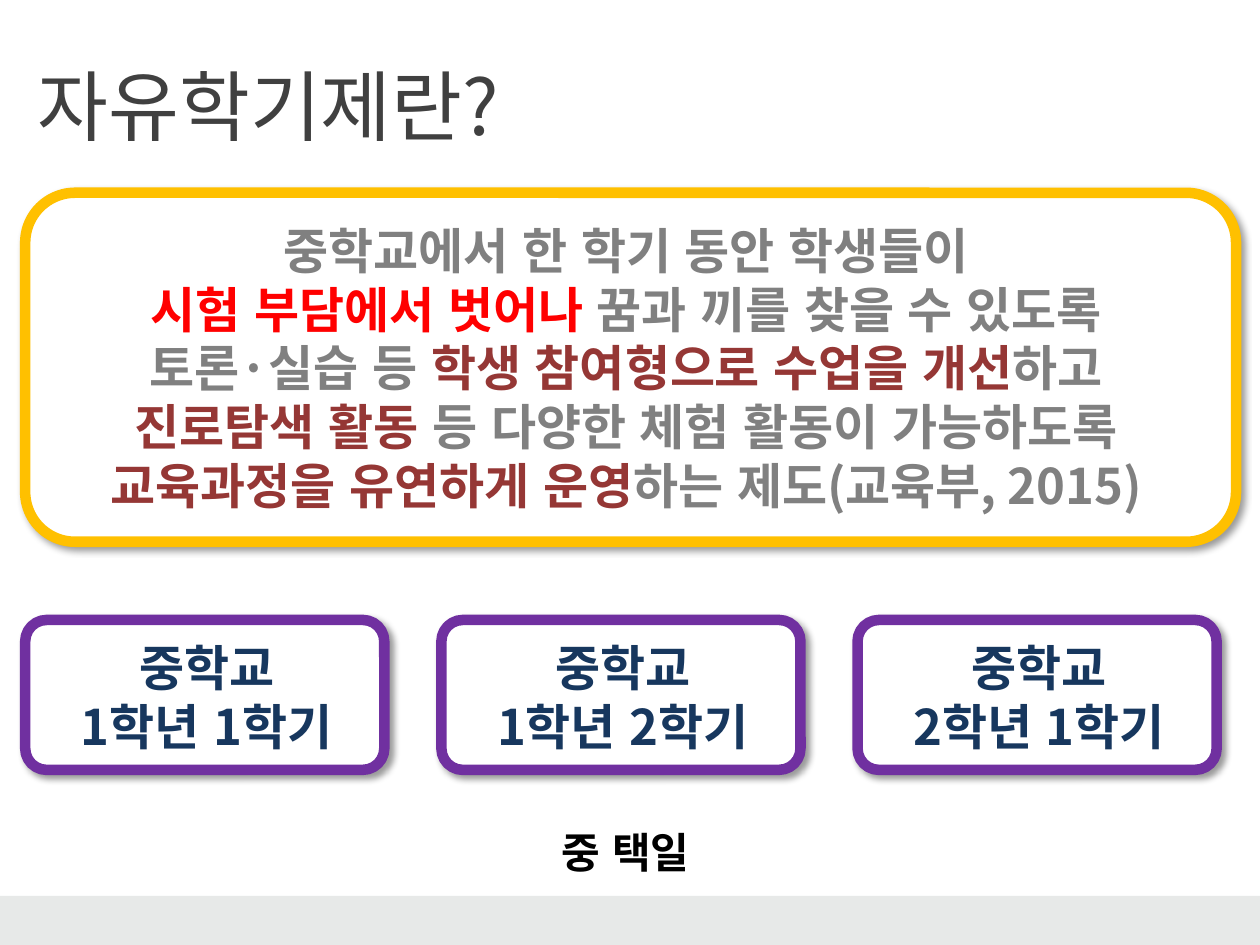
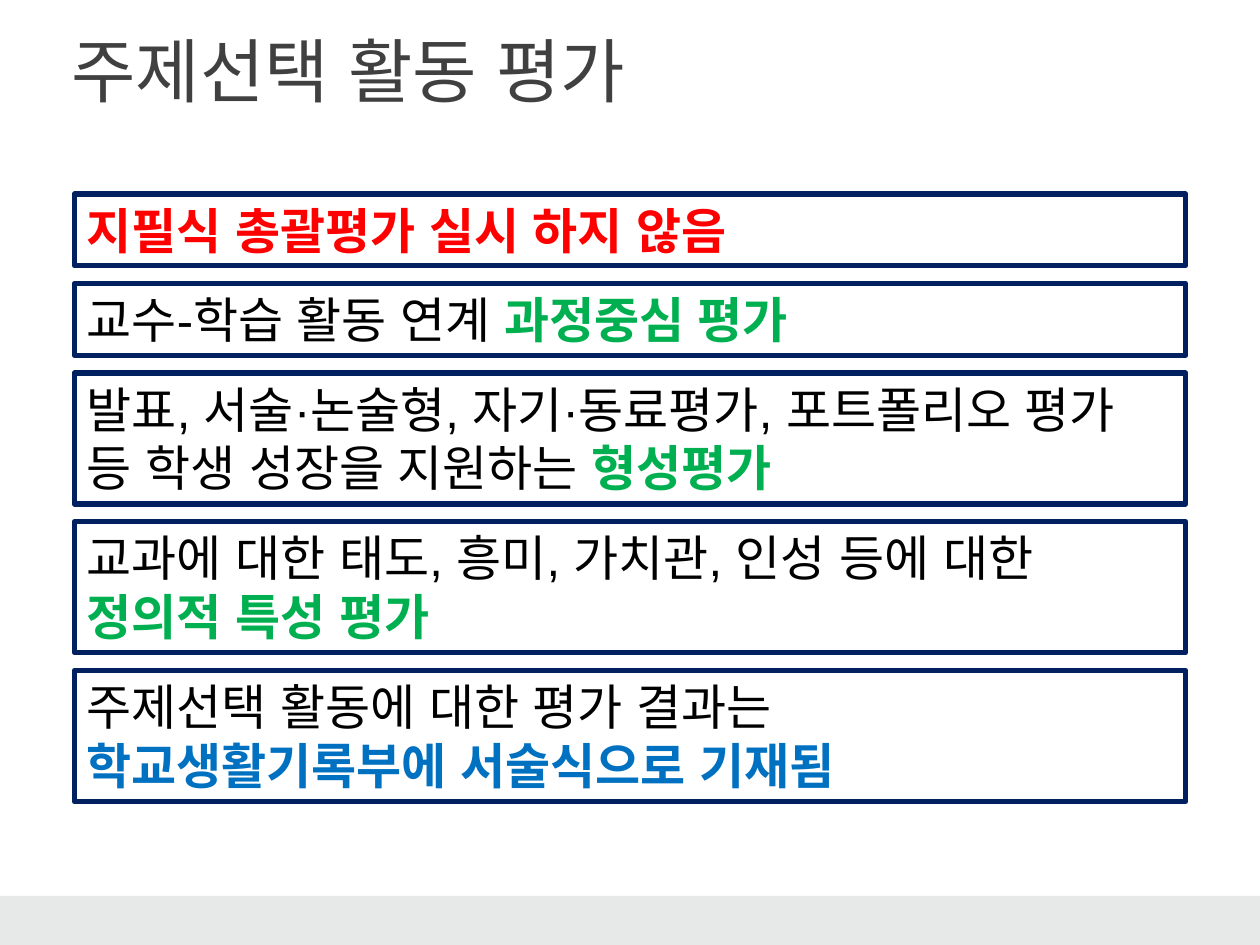
"""Build two slides that explain the exam-free semester and how it is assessed."""
from lxml import etree
from pptx import Presentation
from pptx import util as u
from pptx.dml.color import RGBColor
from pptx.enum import lang, shapes, text
from pptx.oxml import ns

WIDTH, HEIGHT = u.Inches(10), u.Inches(7.5)
KOREAN = "Noto Sans CJK KR"
WHITE, BLACK, BAND, TITLE = "FFFFFF", "000000", "E7E9E8", "404040"
GREY, RED, BROWN, INK = "808080", "FF0000", "953735", "17375E"
GOLD, PURPLE, NAVY = "FFC000", "7030A0", "002060"
GREEN, BLUE = "00B050", "0070C0"
BODY_SIZE = 28

DEFINITION = [
    [("중학교에서 한 학기 동안 학생들이", GREY, True)],
    [("시험 부담에서 벗어나 ", RED, True), ("꿈과 끼를 찾을 수 있도록", GREY, True)],
    [("토론·실습 등 ", GREY, True), ("학생 참여형으로 수업을 개선", BROWN, True),
     ("하고", GREY, True)],
    [("진로탐색 활동 ", BROWN, True), ("등 다양한 체험 활동이 가능하도록 ", GREY, True),
     ("교육과정을 유연하게 운영", BROWN, True), ("하는 제도(교육부, 2015)", GREY, True)],
]
SEMESTERS = ["1학년 1학기", "1학년 2학기", "2학년 1학기"]
ASSESSMENTS = [
    (1, [[("지필식 총괄평가 실시 하지 않음", RED, True)]]),
    (1, [[("교수-학습 활동 연계 ", BLACK, False), ("과정중심 평가", GREEN, True)]]),
    (2, [[("발표, 서술·논술형, 자기·동료평가, 포트폴리오 평가 등 학생 성장을 지원하는 ",
           BLACK, False), ("형성평가", GREEN, True)]]),
    (2, [[("교과에 대한 태도, 흥미, 가치관, 인성 등에 대한 ", BLACK, False),
          ("정의적 특성 평가", GREEN, True)]]),
    (2, [[("주제선택 활동에 대한 평가 결과는", BLACK, False)],
         [("학교생활기록부에 서술식으로 기재됨", BLUE, True)]]),
]


def color(value):
    """Turn a hex string into a colour."""
    return RGBColor.from_string(value)


def place(left, top, width, height):
    """Turn shares of the slide, in percent, into lengths."""
    return [int(share * side / 100) for share, side in
            zip((left, top, width, height), (WIDTH, HEIGHT, WIDTH, HEIGHT))]


def add_shadow(box):
    """Give a shape a soft shadow to the lower right."""
    effects = box._element.spPr.find(ns.qn("a:effectLst"))
    shadow = etree.SubElement(
        effects, ns.qn("a:outerShdw"), blurRad=str(u.Pt(4)), dist=str(u.Pt(3)),
        dir=str(45 * 60000), algn="tl", rotWithShape="0")
    tint = etree.SubElement(shadow, ns.qn("a:srgbClr"), val=BLACK)
    etree.SubElement(tint, ns.qn("a:alpha"), val="40000")


def add_box(page, area, fill, line=None, weight=0, rounded=False):
    """Add a filled rectangle; a rounded one casts a shadow."""
    kind = shapes.MSO_SHAPE.ROUNDED_RECTANGLE if rounded else shapes.MSO_SHAPE.RECTANGLE
    box = page.shapes.add_shape(kind, *place(*area))
    box.shadow.inherit = False
    box.fill.solid()
    box.fill.fore_color.rgb = color(fill)
    if line:
        box.line.color.rgb = color(line)
        box.line.width = u.Pt(weight)
    else:
        box.line.fill.background()
    if rounded:
        box.adjustments[0] = 0.143
        add_shadow(box)
    return box


def format_span(span, size, font, tone, bold):
    """Set the type of one run for Latin and Korean letters."""
    span.font.size = u.Pt(size)
    span.font.bold = bold
    span.font.color.rgb = color(tone)
    span.font.language_id = lang.MSO_LANGUAGE_ID.KOREAN
    span.font.name = font
    etree.SubElement(span._r.get_or_add_rPr(), ns.qn("a:ea"), typeface=KOREAN)


def write(box, paras, size=BODY_SIZE, font=KOREAN, align=text.PP_ALIGN.CENTER,
          anchor=text.MSO_ANCHOR.TOP, leading=1.2):
    """Fill a box with paragraphs of (words, colour, bold) spans."""
    frame = box.text_frame
    frame.word_wrap = True
    frame.vertical_anchor = anchor
    for index, spans in enumerate(paras):
        para = frame.add_paragraph() if index else frame.paragraphs[0]
        para.alignment = align
        if leading:
            para.line_spacing = u.Pt(size * leading)
        for words, tone, bold in spans:
            span = para.add_run()
            span.text = words
            format_span(span, size, font, tone, bold)


def add_text(page, area, paras, **style):
    """Add a text box."""
    write(page.shapes.add_textbox(*place(*area)), paras, **style)


def add_page(deck, title, area, size):
    """Add a blank slide with the footer band and a title."""
    page = deck.slides.add_slide(deck.slide_layouts[6])
    add_box(page, (0, 94.8, 100, 5.2), BAND)
    add_text(page, area, [[(title, TITLE, False)]], size=size, leading=None,
             align=text.PP_ALIGN.LEFT, anchor=text.MSO_ANCHOR.MIDDLE)
    return page


def add_semester(page, column, semester):
    """Add one card in the row of semesters."""
    left = 2 + column * 33.03
    add_box(page, (left, 65.6, 28.5, 15.87), WHITE, PURPLE, 6, rounded=True)
    add_text(page, (left + 0.8, 66.8, 27.2, 13.87),
             [[("중학교", INK, True)], [(semester, INK, True)]])


def build_definition(deck):
    """Build the slide that defines the exam-free semester."""
    page = add_page(deck, "자유학기제란?", (2, 2.8, 90, 16.67), 44)
    add_box(page, (2, 20.4, 96.1, 36.93), WHITE, GOLD, 6, rounded=True)
    add_text(page, (3.2, 22.67, 93, 32.8), DEFINITION)
    for column, semester in enumerate(SEMESTERS):
        add_semester(page, column, semester)
    add_text(page, (20.1, 86.8, 59.1, 6.67), [[("중 택일", BLACK, True)]], size=24)


def build_assessment(deck):
    """Build the slide that stacks the assessment rules."""
    page = add_page(deck, "주제선택 활동 평가", (4.7, 3.33, 91.2, 8.13), 40)
    top, line, padding, gap = 20.53, 6.27, 1.33, 1.87
    for lines, paras in ASSESSMENTS:
        height = padding + lines * line
        box = add_box(page, (5.9, top, 88.2, height), WHITE, NAVY, 3)
        write(box, paras, font="Arial", align=text.PP_ALIGN.LEFT)
        top += height + gap


def main():
    """Build and save the deck."""
    deck = Presentation()
    deck.slide_width, deck.slide_height = WIDTH, HEIGHT
    build_definition(deck)
    build_assessment(deck)
    deck.save("out.pptx")


if __name__ == "__main__":
    main()
